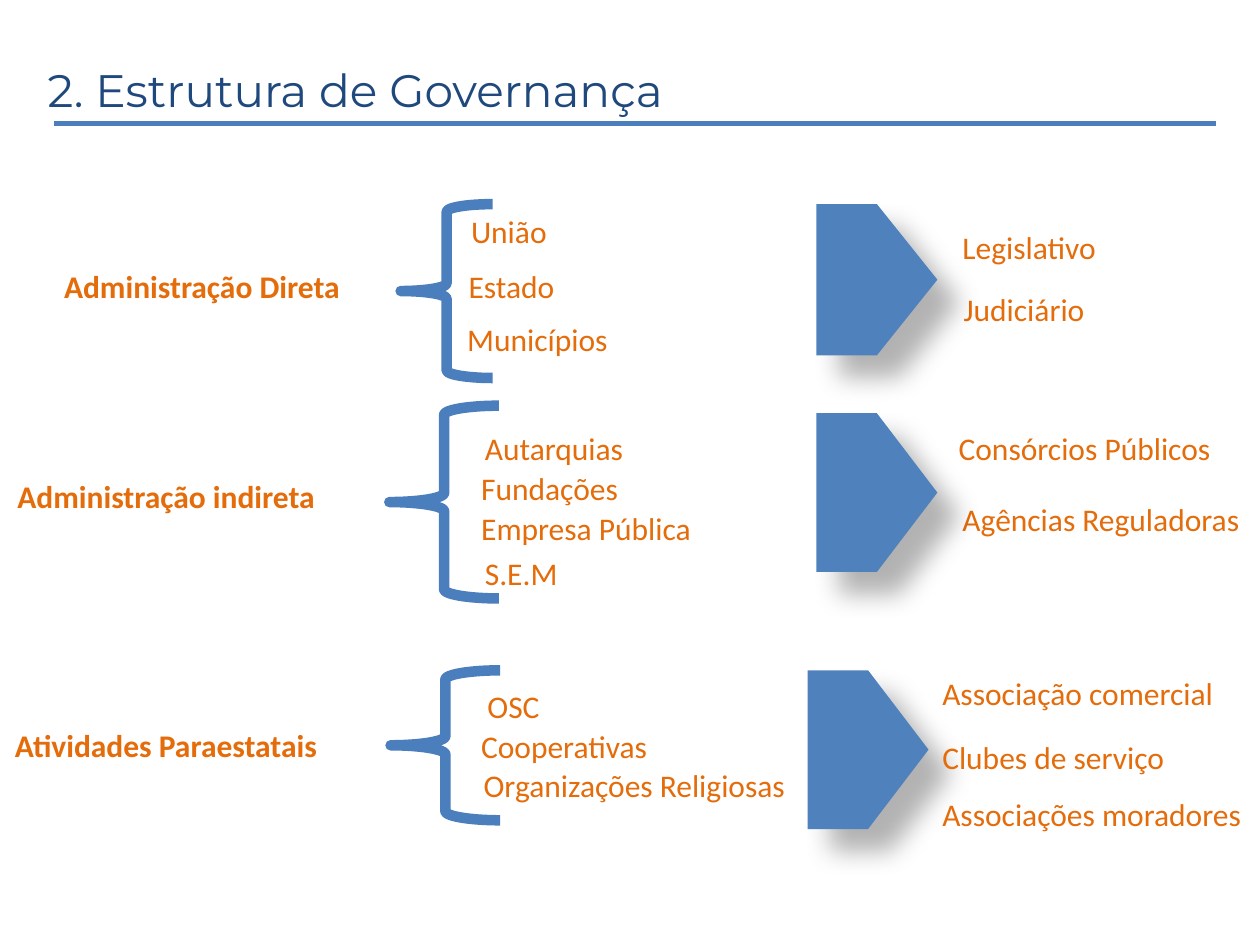
import pptx
import pptx.dml.color
import pptx.enum.shapes
import pptx.oxml
import pptx.oxml.ns
import pptx.util

Inches = pptx.util.Inches
Pt = pptx.util.Pt
SHAPES = pptx.enum.shapes.MSO_SHAPE

ORANGE = "E46C0A"
NAVY = "1F497D"
LINE_BLUE = "4B7EBC"
FILL_BLUE = "4F81BD"

CATEGORIES = [
    ("Administração Direta", 0.41, 2.07, 2.41),
    ("Administração indireta", 0.04, 3.74, 2.56),
    ("Atividades Paraestatais", 0.02, 5.71, 2.62),
]
MEMBERS = [
    ("Estado", 3.62, 2.07, 0.89),
    ("Municípios", 3.61, 2.49, 1.33),
    ("Autarquias", 3.75, 3.36, 1.31),
    ("Fundações", 3.72, 3.67, 1.3),
    ("Empresa Pública", 3.72, 3.99, 1.88),
    ("S.E.M", 3.75, 4.35, 0.84),
    ("OSC", 3.77, 5.4, 0.62),
    ("Cooperativas", 3.72, 5.72, 1.54),
    ("Organizações Religiosas", 3.74, 6.03, 2.62),
    ("Legislativo", 7.54, 1.76, 1.27),
    ("Judiciário", 7.55, 2.25, 1.17),
    ("Consórcios Públicos", 7.51, 3.36, 2.22),
    ("Agências Reguladoras", 7.54, 3.92, 2.42),
]
ASSOCIATIONS = [
    ("Associação comercial", 5.3),
    ("Clubes de serviço", 5.81),
    ("Associações moradores", 6.26),
]
BRACES = [
    (3.18, 1.62, 0.73, 1.38),
    (3.09, 3.22, 0.87, 1.53),
    (3.1, 5.32, 0.87, 1.19),
]
ARROWS = [
    (6.48, 1.62, 0.96, 1.2),
    (6.48, 3.28, 0.96, 1.26),
    (6.41, 5.32, 0.96, 1.26),
]


def rgb(value):
    return pptx.dml.color.RGBColor.from_string(value)


def add_text(s, text, left, top, width, height=0.4, *, size=18,
             font="Calibri", color=ORANGE, bold=False, wrap=False):
    sp = s.shapes.add_textbox(*map(Inches, (left, top, width, height)))
    tf = sp.text_frame
    tf.word_wrap = wrap
    r = tf.paragraphs[0].add_run()
    r.text = text
    r.font.size = Pt(size)
    r.font.name = font
    r.font.bold = bold
    r.font.color.rgb = rgb(color)


def add_brace(s, box):
    sp = s.shapes.add_shape(SHAPES.LEFT_BRACE, *map(Inches, box))
    sp.shadow.inherit = False
    sp.fill.background()
    sp.line.color.rgb = rgb(LINE_BLUE)
    sp.line.width = Pt(6)


def add_arrow(s, box):
    sp = s.shapes.add_shape(SHAPES.PENTAGON, *map(Inches, box))
    sp.fill.solid()
    sp.fill.fore_color.rgb = rgb(FILL_BLUE)
    sp.line.fill.background()
    sp.shadow.inherit = False
    effects = sp.element.spPr.find(pptx.oxml.ns.qn("a:effectLst"))
    effects.append(pptx.oxml.parse_xml(
        f'<a:outerShdw {pptx.oxml.ns.nsdecls("a")} blurRad="{Pt(15)}" '
        f'dist="{Pt(18)}" dir="2700000" algn="tl" rotWithShape="0">'
        '<a:srgbClr val="000000"><a:alpha val="30000"/></a:srgbClr>'
        '</a:outerShdw>'))


def add_rule(s, left, right, y):
    line = s.shapes.add_connector(
        pptx.enum.shapes.MSO_CONNECTOR.STRAIGHT,
        Inches(left), Inches(y), Inches(right), Inches(y))
    line.line.color.rgb = rgb(LINE_BLUE)
    line.line.width = Pt(3)
    line._element.spPr.append(pptx.oxml.parse_xml(
        f'<a:effectLst {pptx.oxml.ns.nsdecls("a")}/>'))


def main():
    prs = pptx.Presentation()
    prs.slide_width = Inches(10)
    prs.slide_height = Inches(7.5)
    s = prs.slides.add_slide(prs.slide_layouts[6])

    add_text(s, "2. Estrutura de Governança", 0.28, 0.44, 8.01, 0.54,
             size=26, font="Montserrat", color=NAVY, wrap=True)
    for category in CATEGORIES:
        add_text(s, *category, bold=True)
    add_text(s, "União", 3.64, 1.63, 1, 0.71, wrap=True)
    for member in MEMBERS:
        add_text(s, *member)
    for box in BRACES:
        add_brace(s, box)
    for box in ARROWS:
        add_arrow(s, box)
    add_rule(s, 0.43, 9.65, 0.98)
    for text, top in ASSOCIATIONS:
        add_text(s, text, 7.38, top, 2.62, wrap=True)

    prs.save("out.pptx")


if __name__ == "__main__":
    main()
